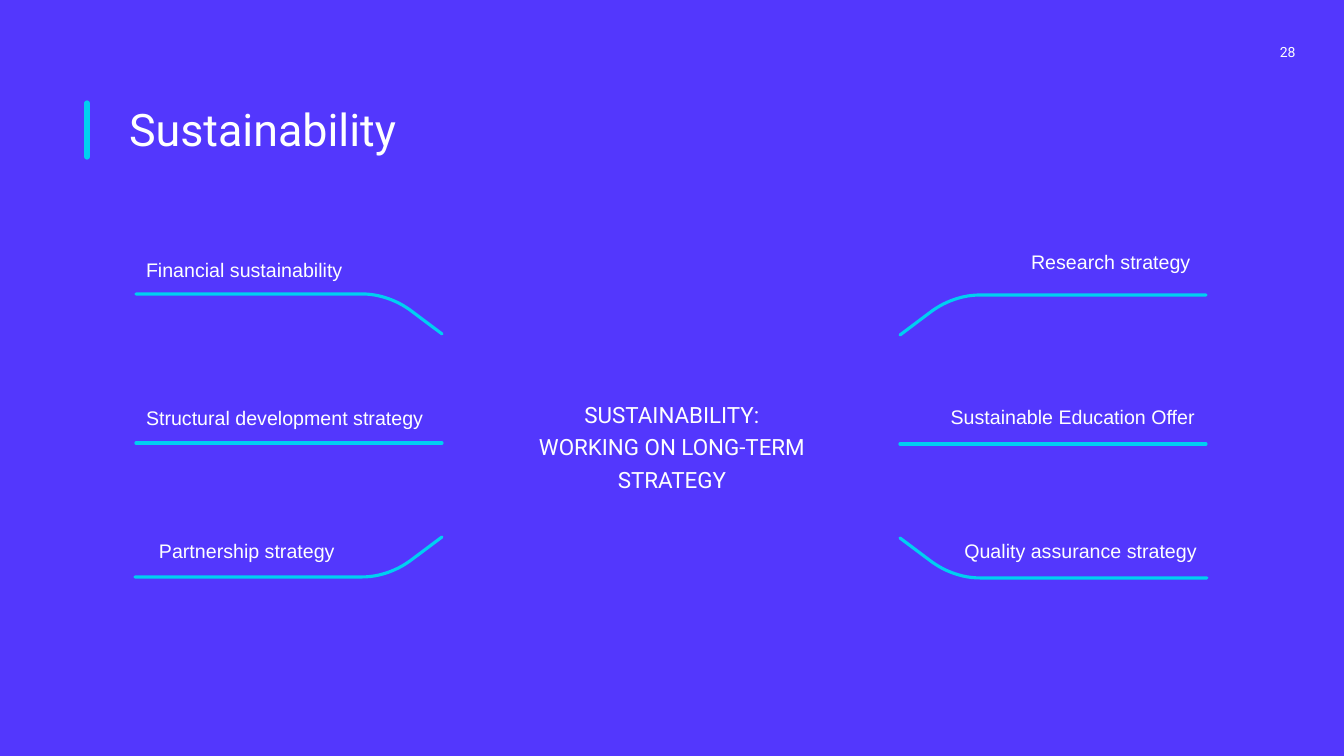
from dataclasses import dataclass
from typing import Any

import pptx
import pptx.dml.color
import pptx.enum.shapes
import pptx.enum.text
import pptx.oxml
import pptx.oxml.ns
import pptx.util

EMU_PER_PX = 12192000 / 1344
BACKGROUND, WHITE, CYAN = "5337FD", "FEFFFF", "00CFF1"
ALIGN = pptx.enum.text.PP_ALIGN
AUTO_SIZE = pptx.enum.text.MSO_AUTO_SIZE
CURVE_STEPS = 12

Box = tuple[int, int, int, int]
Point = tuple[float, float]


@dataclass
class TextStyle:
    font: str
    size: int
    align: Any = ALIGN.LEFT
    line_spacing: float = 1.0
    space_before: int = 0
    auto_size: Any = AUTO_SIZE.NONE
    insets: Box = (10, 5, 10, 5)


@dataclass
class Branch:
    label: str
    box: Box
    outer_x: int
    tip_x: int
    y: int
    toward: int  # 1 bends down, -1 bends up, 0 stays straight


BRANCHES = [
    Branch("Financial sustainability", (136, 248, 305, 46), 136, 442, 294, 1),
    Branch("Structural development strategy", (136, 396, 343, 36), 136, 442, 443, 0),
    Branch("Partnership strategy", (149, 529, 242, 36), 135, 442, 577, -1),
    Branch("Research strategy ", (995, 240, 211, 36), 1206, 900, 295, 1),
    Branch("Sustainable Education Offer", (930, 395, 275, 36), 1206, 900, 444, 0),
    Branch("Quality assurance strategy", (865, 529, 342, 36), 1207, 900, 578, -1),
]


def px(value: float) -> pptx.util.Emu:
    return pptx.util.Emu(round(value * EMU_PER_PX))


def color(value: str) -> pptx.dml.color.RGBColor:
    return pptx.dml.color.RGBColor.from_string(value)


def set_attributes(target: Any, values: dict[str, Any]) -> None:
    for name, value in values.items():
        setattr(target, name, value)


def write_text(shape: Any, text: str, box: Box, style: TextStyle) -> None:
    set_attributes(shape, dict(zip(("left", "top", "width", "height"), map(px, box))))
    margins = ("margin_left", "margin_top", "margin_right", "margin_bottom")
    set_attributes(shape.text_frame, {
        **dict(zip(margins, map(px, style.insets))),
        "word_wrap": True,
        "auto_size": style.auto_size,
        "vertical_anchor": pptx.enum.text.MSO_ANCHOR.TOP,
    })
    paragraph = shape.text_frame.paragraphs[0]
    paragraph.text = text
    set_attributes(paragraph, {
        "alignment": style.align,
        "line_spacing": style.line_spacing,
        "space_before": pptx.util.Pt(style.space_before),
    })
    for run in paragraph.runs:
        set_attributes(run.font, {"name": style.font, "size": pptx.util.Pt(style.size)})
        run.font.color.rgb = color(WHITE)


def add_text(slide: Any, text: str, box: Box, style: TextStyle) -> None:
    write_text(slide.shapes.add_textbox(*map(px, box)), text, box, style)


def remove_bullet(shape: Any) -> None:
    properties = shape.text_frame.paragraphs[0]._p.get_or_add_pPr()
    properties.set("marL", "0")
    properties.set("indent", "0")
    pptx.oxml.ns.qn("a:buNone")
    properties.append(properties.makeelement(pptx.oxml.ns.qn("a:buNone"), {}))


def style_line(shape: Any, width: float) -> None:
    shape.line.color.rgb = color(CYAN)
    shape.line.width = pptx.util.Pt(width)
    shape.line._get_or_add_ln().set("cap", "rnd")


def add_line(slide: Any, start: Point, end: Point, width: float) -> None:
    connector = slide.shapes.add_connector(
        pptx.enum.shapes.MSO_CONNECTOR.STRAIGHT, *map(px, (*start, *end)))
    style_line(connector, width)
    properties = connector._element.spPr
    properties.append(properties.makeelement(pptx.oxml.ns.qn("a:effectLst"), {}))


def bezier(controls: list[Point]) -> list[Point]:
    points = []
    for step in range(CURVE_STEPS + 1):
        t = step / CURVE_STEPS
        weights = ((1 - t) ** 3, 3 * t * (1 - t) ** 2, 3 * t * t * (1 - t), t ** 3)
        points.append((sum(w * x for w, (x, _) in zip(weights, controls)),
                       sum(w * y for w, (_, y) in zip(weights, controls))))
    return points


def add_branch_line(slide: Any, branch: Branch) -> None:
    if branch.toward == 0:
        add_line(slide, (branch.outer_x, branch.y), (branch.tip_x, branch.y), 2.25)
        return
    outward = 1 if branch.outer_x > branch.tip_x else -1
    # Distances from the tip and from the level stretch
    bend = [(80, 0), (63, 0), (46, 6), (32, 16)]
    controls = [(branch.tip_x + outward * across, branch.y + branch.toward * down)
                for across, down in bend]
    tip = (branch.tip_x, branch.y + branch.toward * 40)
    builder = slide.shapes.build_freeform(px(branch.outer_x), px(branch.y))
    builder.add_line_segments(
        [(px(x), px(y)) for x, y in [*bezier(controls), tip]], close=False)
    shape = builder.convert_to_shape()
    shape.fill.background()
    shape.shadow.inherit = False
    style_line(shape, 2.25)


def main() -> None:
    presentation = pptx.Presentation()
    set_attributes(presentation, {"slide_width": px(1344), "slide_height": px(756)})
    slide = presentation.slides.add_slide(presentation.slide_layouts[1])
    slide.background.fill.solid()
    slide.background.fill.fore_color.rgb = color(BACKGROUND)

    # Heading and page number
    write_text(slide.shapes.title, "Sustainability", (119, 103, 1065, 106),
               TextStyle("Roboto", 32, line_spacing=0.9))
    add_line(slide, (87, 103), (87, 157), 3.75)
    add_text(slide, "28 ", (1238, 44, 61, 27),
             TextStyle("Roboto", 10, ALIGN.RIGHT, insets=(10, 0, 0, 5)))

    # Central theme
    add_text(slide, "SUSTAINABILITY:\nWORKING ON LONG-TERM STRATEGY", (501, 391, 342, 106),
             TextStyle("Roboto", 16, ALIGN.CENTER, 1.2, 10, AUTO_SIZE.SHAPE_TO_FIT_TEXT))

    # Strategies: the first one fills the body placeholder
    body = slide.placeholders[1]
    first, *others = BRANCHES
    write_text(body, first.label, first.box, TextStyle("Arial", 14, ALIGN.LEFT, 1.2, 12))
    remove_bullet(body)
    for branch in others:
        align = ALIGN.RIGHT if branch.outer_x > branch.tip_x else ALIGN.LEFT
        add_text(slide, branch.label, branch.box,
                 TextStyle("Arial", 14, align, 1.2, 10, AUTO_SIZE.SHAPE_TO_FIT_TEXT))
    for branch in BRANCHES:
        add_branch_line(slide, branch)

    presentation.save("out.pptx")


if __name__ == "__main__":
    main()
